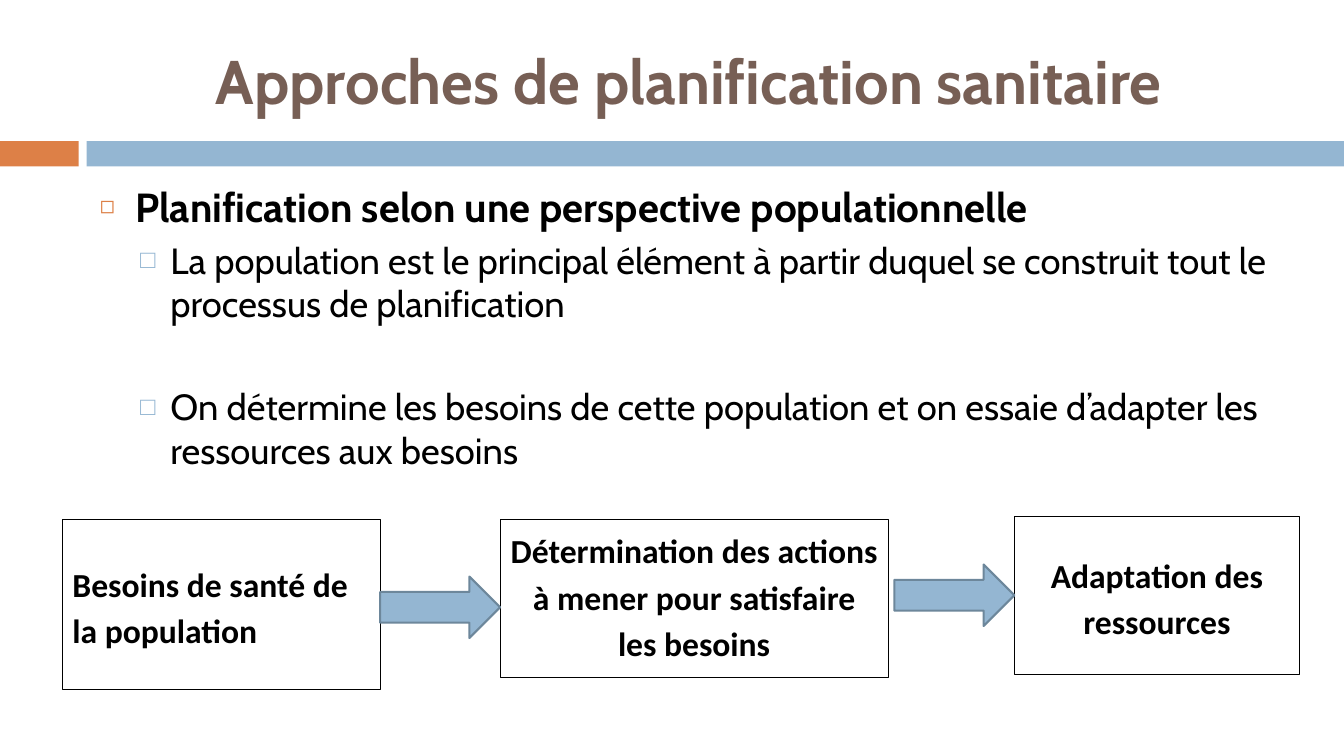
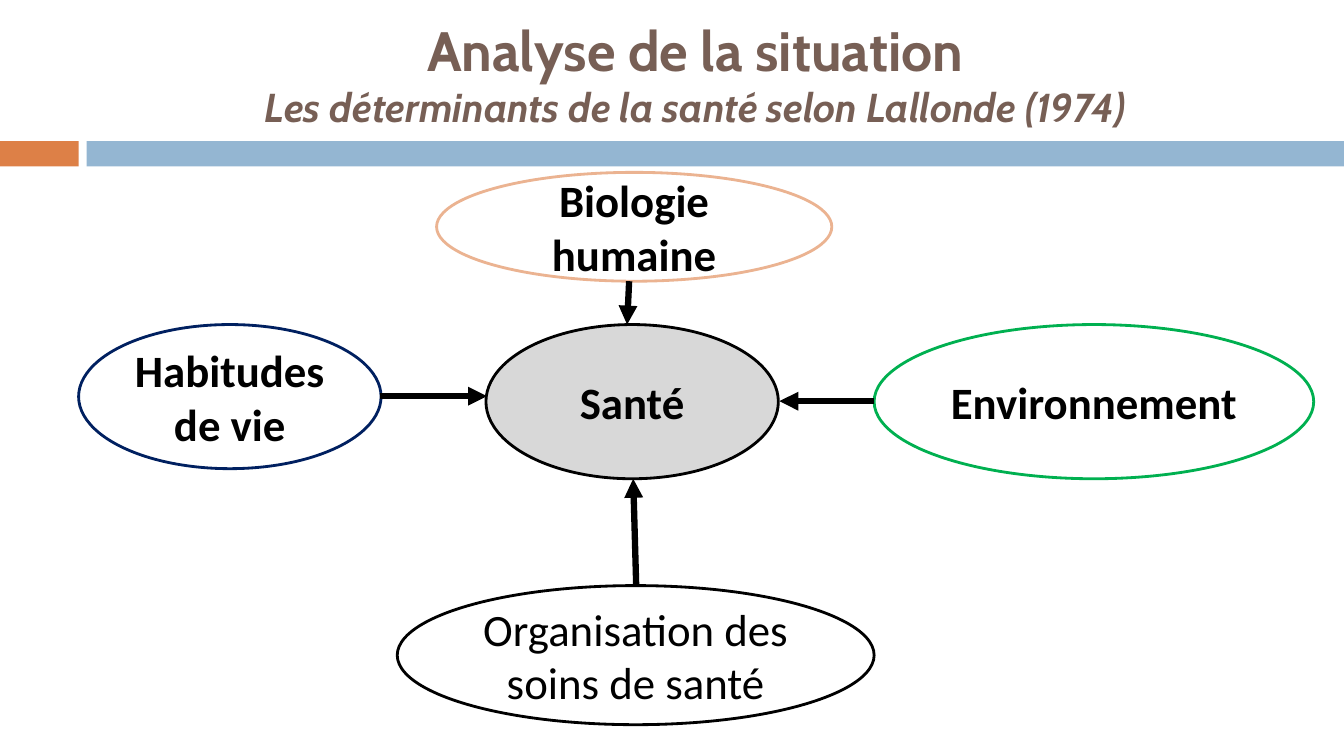
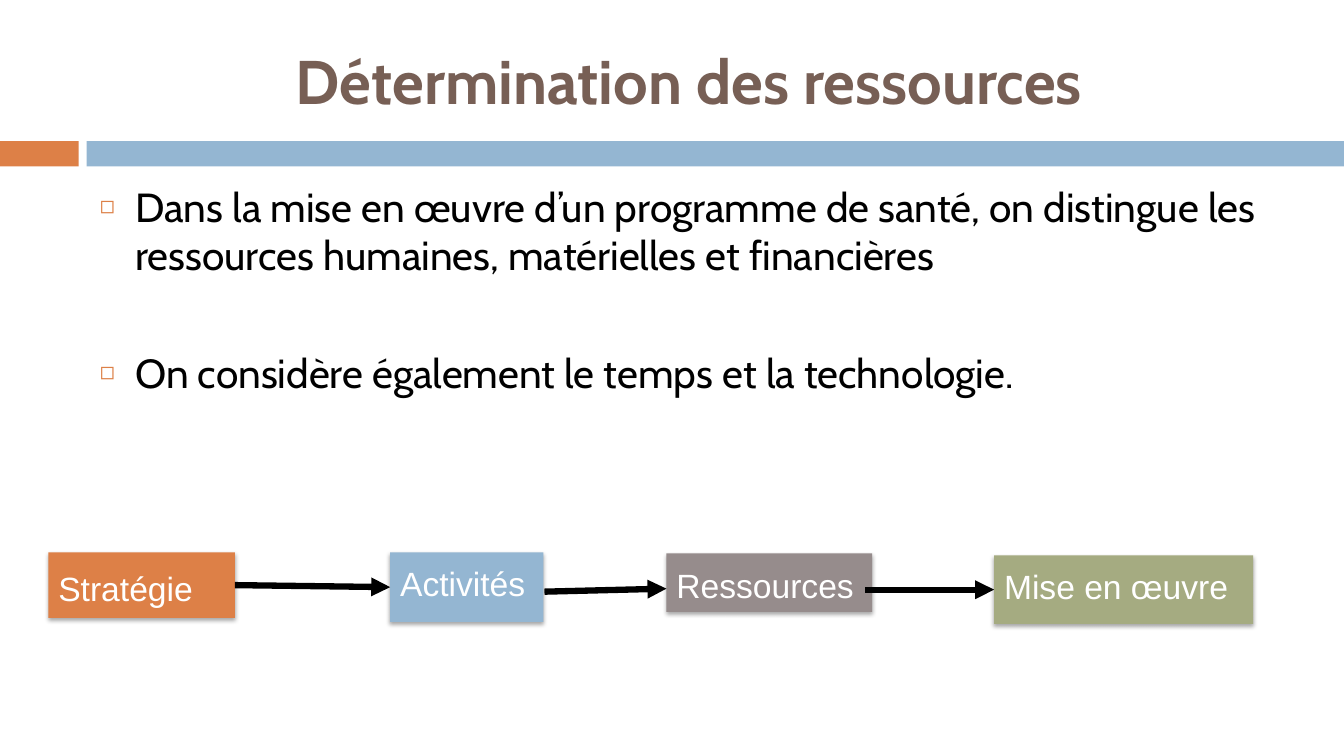
"""Build three slides on health planning: approaches, determinants and resources."""
from lxml import etree
from pptx import Presentation
from pptx import util as u
from pptx.dml.color import RGBColor
from pptx.enum import shapes, text
from pptx.oxml.ns import qn

COLORS = {
    "orange": "DD8047", "blue": "94B6D2", "brown": "775F55", "black": "000000",
    "white": "FFFFFF", "slate": "6D879B", "peach": "EBB391", "grey": "D8D8D8",
    "green": "00B050", "navy": "002060", "taupe": "968C8C", "olive": "A5AB81",
}
RGB = {name: RGBColor.from_string(value) for name, value in COLORS.items()}
RECT = shapes.MSO_SHAPE.RECTANGLE
OVAL = shapes.MSO_SHAPE.OVAL
ARROW = shapes.MSO_SHAPE.RIGHT_ARROW
MIDDLE, TOP = text.MSO_ANCHOR.MIDDLE, text.MSO_ANCHOR.TOP
LEFT, CENTER = text.PP_ALIGN.LEFT, text.PP_ALIGN.CENTER


def add_run(p, words, color, fmt):
    """Add a run of text and apply its font values."""
    r = p.add_run()
    r.text = words
    r.font.color.rgb = RGB[color]
    for name, value in fmt.items():
        setattr(r.font, name, value)


def add_box(s, kind, at, fill=None, line=None, width=0.75, words="", color="black",
            font=None, para=None, anchor=MIDDLE):
    """Add a preset shape with optional fill, outline and text."""
    sp = s.shapes.add_shape(kind, *map(u.Inches, at))
    sp.shadow.inherit = False
    if fill:
        sp.fill.solid()
        sp.fill.fore_color.rgb = RGB[fill]
    else:
        sp.fill.background()
    if line:
        sp.line.color.rgb = RGB[line]
        sp.line.width = u.Pt(width)
    else:
        sp.line.fill.background()
    if words:
        tf = sp.text_frame
        tf.word_wrap = True
        tf.vertical_anchor = anchor
        p = tf.paragraphs[0]
        for name, value in para.items():
            setattr(p, name, value)
        add_run(p, words, color, font)
    return sp


prs = Presentation()
prs.slide_width, prs.slide_height = u.Inches(13.33), u.Inches(7.5)
approaches, analysis, resources = [
    prs.slides.add_slide(prs.slide_layouts[n]) for n in (1, 5, 1)]

for left, width, color in ((0, 0.78, "orange"), (0.86, 12.47, "blue")):
    band = add_box(approaches, RECT, (left, 1.4, width, 0.25), color)
    prs.slide_master.shapes.element.append(band.element)

title_at = (0.89, 0.25, 11.89, 1.08)
titles = [
    (approaches, title_at, [("Approches de planification sanitaire", 44, False)]),
    (analysis, (0.95, 0.05, 11.89, 1.36), [
        ("Analyse de la situation", 39.6, False),
        ("Les déterminants de la santé selon Lallonde (1974)", 28.8, True)]),
    (resources, title_at, [("Détermination des ressources", 44, False)]),
]
for s, at, lines in titles:
    sp = s.shapes.title
    sp.left, sp.top, sp.width, sp.height = map(u.Inches, at)
    tf = sp.text_frame
    tf.auto_size = text.MSO_AUTO_SIZE.NONE
    tf.vertical_anchor = MIDDLE
    p = tf.paragraphs[0]
    p.alignment = CENTER
    for i, (words, size, italic) in enumerate(lines):
        if i:
            p.add_line_break()
        add_run(p, words, "brown", {
            "name": "Cabin", "size": u.Pt(size), "bold": True, "italic": italic})

levels = [
    {"margin": 0.35, "hang": 0.35, "size": 29, "bullet": "◻", "color": "orange", "scale": 60},
    {"margin": 0.7, "hang": 0.3, "size": 26, "bullet": "□", "color": "blue", "scale": 70},
]
bodies = [
    (approaches, 3.4, [
        (0, 7, True, "Planification selon une perspective populationnelle"),
        (1, 5.5, False, "La population est le principal élément à partir duquel se "
                        "construit tout le processus de planification"),
        (1, 42.4, False, "On détermine les besoins de cette population et on essaie "
                         "d’adapter les ressources aux besoins")]),
    (resources, 2.44, [
        (0, 7, False, "Dans la mise en œuvre d’un programme de santé, on distingue les "
                      "ressources humaines, matérielles et financières"),
        (0, 49, False, "On considère également le temps et la technologie.")]),
]
for s, height, items in bodies:
    sp = s.placeholders[1]
    sp.left, sp.top, sp.width, sp.height = map(u.Inches, (0.89, 1.75, 11.89, height))
    tf = sp.text_frame
    tf.auto_size = text.MSO_AUTO_SIZE.NONE
    for i, (level, before, bold, words) in enumerate(items):
        p = tf.add_paragraph() if i else tf.paragraphs[0]
        look = levels[level]
        p.level = level
        p.space_before = u.Pt(before)
        pPr = p._p.get_or_add_pPr()
        pPr.set("marL", str(u.Inches(look["margin"])))
        pPr.set("indent", str(-u.Inches(look["hang"])))
        clr = etree.SubElement(pPr, qn("a:buClr"))
        etree.SubElement(clr, qn("a:srgbClr"), val=COLORS[look["color"]])
        etree.SubElement(pPr, qn("a:buSzPct"), val=str(look["scale"] * 1000))
        etree.SubElement(pPr, qn("a:buChar"), char=look["bullet"])
        add_run(p, words, "black", {
            "name": "Cabin", "size": u.Pt(look["size"]), "bold": bold})

step_font = {"name": "Calibri", "size": u.Pt(24), "bold": True}
spaced = {"line_spacing": 1.15, "space_after": u.Pt(10)}
steps = [
    ((0.62, 5.15, 3.15, 1.69), LEFT, MIDDLE, "Besoins de santé de la population"),
    ((4.96, 5.15, 3.85, 1.57), CENTER, TOP,
     "Détermination des actions à mener pour satisfaire les besoins"),
    ((10.06, 5.12, 2.83, 1.57), CENTER, MIDDLE, "Adaptation des ressources"),
]
for at, align, anchor, words in steps:
    add_box(approaches, RECT, at, "white", "black", words=words, font=step_font,
            para={**spaced, "alignment": align}, anchor=anchor)
for left, top in ((3.77, 5.72), (8.87, 5.6)):
    add_box(approaches, ARROW, (left, top, 1.19, 0.61), "blue", "slate", 1.5)

factors = [
    ((4.33, 1.71, 3.92, 1.08), None, "peach", True, "Biologie humaine"),
    ((4.82, 3.22, 2.9, 1.53), "grey", "black", True, "Santé"),
    ((8.67, 3.22, 4.36, 1.53), None, "green", True, "Environnement"),
    ((0.78, 3.22, 3, 1.43), None, "navy", True, "Habitudes de vie"),
    ((3.94, 5.81, 4.73, 1.38), None, "black", False, "Organisation des soins de santé"),
]
for at, fill, line, bold, words in factors:
    add_box(analysis, OVAL, at, fill, line, 2, words,
            font={"name": "Calibri", "size": u.Pt(32), "bold": bold},
            para={"alignment": CENTER, "space_after": u.Pt(10)})

stages = [
    ((0.48, 5.48, 1.85, 0.65), "orange", MIDDLE, "Stratégie"),
    ((3.87, 5.48, 1.52, 0.69), "blue", TOP, "Activités"),
    ((6.61, 5.49, 2.04, 0.58), "taupe", TOP, "Ressources"),
    ((9.86, 5.51, 2.57, 0.68), "olive", TOP, "Mise en œuvre"),
]
boxes = []
for at, fill, anchor, words in stages:
    sp = add_box(resources, RECT, at, fill, words=words, color="white",
                 font={"name": "Arial", "size": u.Pt(24)},
                 para={**spaced, "alignment": LEFT}, anchor=anchor)
    effects = sp.element.spPr.find(qn("a:effectLst"))
    shadow = etree.SubElement(effects, qn("a:outerShdw"), blurRad=str(u.Pt(3)),
                              dist=str(u.Pt(2)), dir="5400000", rotWithShape="0")
    clr = etree.SubElement(shadow, qn("a:srgbClr"), val=COLORS["black"])
    etree.SubElement(clr, qn("a:alpha"), val="35000")
    boxes.append(sp)
strategy, activities, means, rollout = boxes

arrows = [
    (analysis, (3.77, 3.93, 4.83, 3.93), None, None),
    (analysis, (8.67, 3.98, 7.73, 3.98), None, None),
    (analysis, (6.31, 5.81, 6.28, 4.75), None, None),
    (analysis, (6.24, 2.79, 6.22, 3.22), None, None),
    (resources, (8.58, 5.85, 9.86, 5.85), None, rollout),
    (resources, (5.4, 5.87, 6.61, 5.84), None, None),
    (resources, (2.33, 5.82, 3.87, 5.82), strategy, activities),
]
for s, ends, begin, end in arrows:
    cn = s.shapes.add_connector(shapes.MSO_CONNECTOR.STRAIGHT, *map(u.Inches, ends))
    if begin:
        cn.begin_connect(begin, 3)
    if end:
        cn.end_connect(end, 1)
    cn.line.color.rgb = RGB["black"]
    cn.line.width = u.Pt(4.5)
    spPr = cn.element.spPr
    etree.SubElement(spPr.find(qn("a:ln")), qn("a:tailEnd"), type="triangle")
    etree.SubElement(spPr, qn("a:effectLst"))

prs.save("out.pptx")
